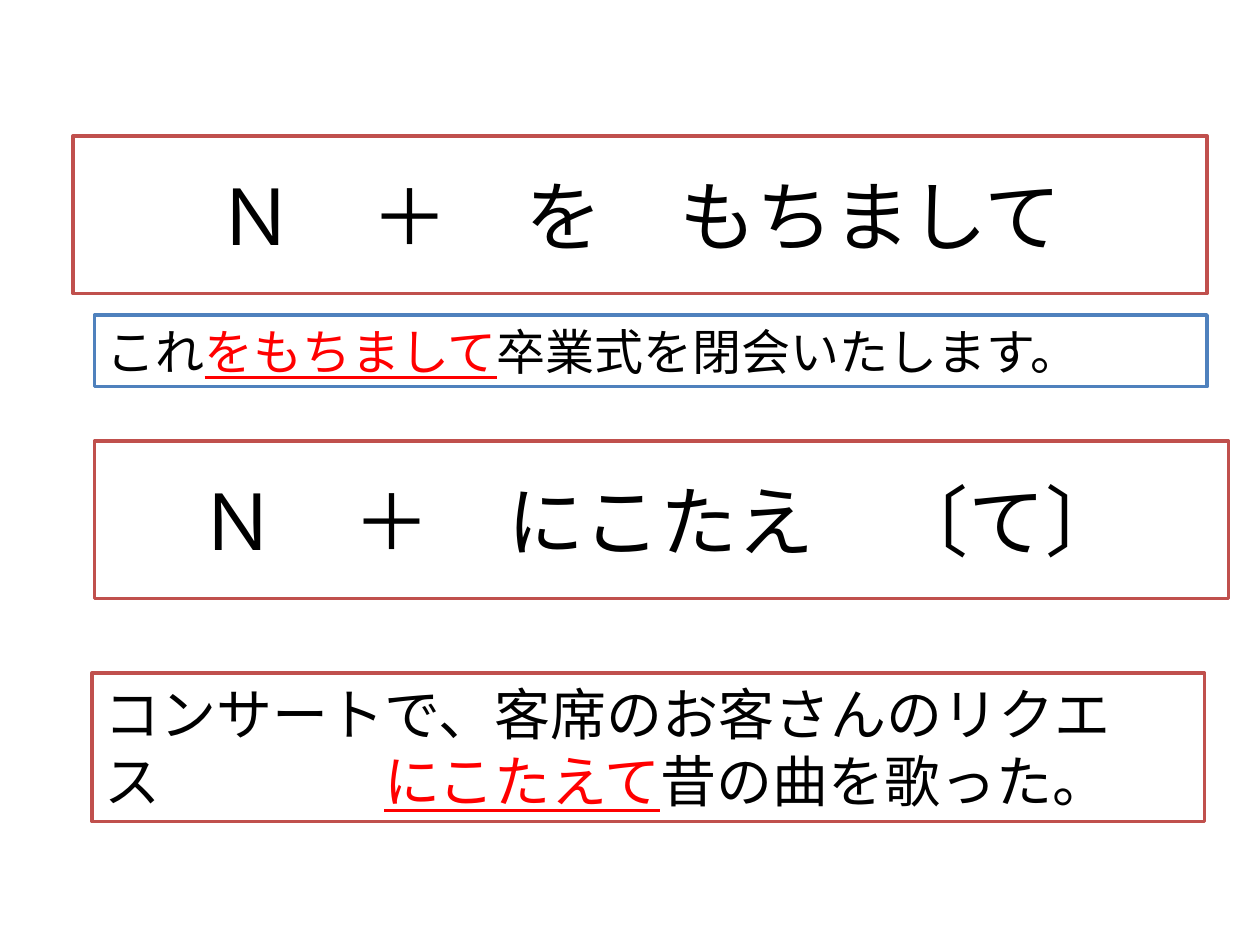
from lxml import etree
from pptx import Presentation
from pptx.dml.color import RGBColor
from pptx.enum.shapes import MSO_SHAPE
from pptx.enum.text import MSO_ANCHOR, MSO_AUTO_SIZE, PP_ALIGN
from pptx.oxml.ns import qn
from pptx.util import Inches, Pt

RECT = MSO_SHAPE.RECTANGLE
MIDDLE, TOP = MSO_ANCHOR.MIDDLE, MSO_ANCHOR.TOP
CENTER, LEFT = PP_ALIGN.CENTER, PP_ALIGN.LEFT
GROW = MSO_AUTO_SIZE.SHAPE_TO_FIT_TEXT

WHITE = RGBColor(0xFF, 0xFF, 0xFF)
BLACK = RGBColor(0, 0, 0)
RED = RGBColor(0xFF, 0, 0)
BRICK = RGBColor(0xC0, 0x50, 0x4D)
BLUE = RGBColor(0x4F, 0x81, 0xBD)
FONT = "Calibri"


def add_box(slide, left, top, width, height, edge):
    box = slide.shapes.add_shape(
        RECT, Inches(left), Inches(top), Inches(width), Inches(height))
    box.shadow.inherit = False
    box.fill.solid()
    box.fill.fore_color.rgb = WHITE
    box.line.color.rgb = edge
    box.line.width = Pt(2)
    box.text_frame.word_wrap = True
    return box.text_frame


def add_run(para, text, size, key=False):
    """Add a run; a key run is red and underlined."""
    run = para.add_run()
    run.text = text
    font = run.font
    font.name = FONT
    font.size = Pt(size)
    font.color.rgb = RED if key else BLACK
    if key:
        font.underline = True


def add_tab(para, pos):
    tabs = etree.SubElement(para._p.get_or_add_pPr(), qn("a:tabLst"))
    etree.SubElement(tabs, qn("a:tab"), pos=str(Inches(pos)), algn="l")


def add_pattern(slide, left, top, text):
    """Add a large centred grammar pattern."""
    frame = add_box(slide, left, top, 9, 1.25, BRICK)
    frame.vertical_anchor = MIDDLE
    para = frame.paragraphs[0]
    para.alignment = CENTER
    add_run(para, text, 44)


def add_example(slide, left, top, height, edge, size):
    """Add an example box and return its empty paragraph."""
    frame = add_box(slide, left, top, 8.83, height, edge)
    frame.vertical_anchor = TOP
    frame.auto_size = GROW
    para = frame.paragraphs[0]
    para.alignment = LEFT
    return para


def main():
    deck = Presentation()
    deck.slide_width = Inches(10)
    deck.slide_height = Inches(7.5)
    slide = deck.slides.add_slide(deck.slide_layouts[6])

    add_pattern(slide, 0.58, 1.08, "Ｎ　＋　を　もちまして")
    para = add_example(slide, 0.75, 2.5, 0.57, BLUE, 28)
    add_run(para, "これ", 28)
    add_run(para, "をもちまして", 28, key=True)
    add_run(para, "卒業式を閉会いたします。", 28)

    add_pattern(slide, 0.75, 3.5, "Ｎ　＋　にこたえ　〔て〕")
    para = add_example(slide, 0.73, 5.34, 1.18, BRICK, 32)
    add_tab(para, 2.22)
    add_run(para, "コンサートで、客席のお客さんのリクエ", 32)
    para.add_line_break()
    add_run(para, "ス\t", 32)
    add_run(para, "にこたえて", 32, key=True)
    add_run(para, "昔の曲を歌った。", 32)

    deck.save("out.pptx")


if __name__ == "__main__":
    main()
